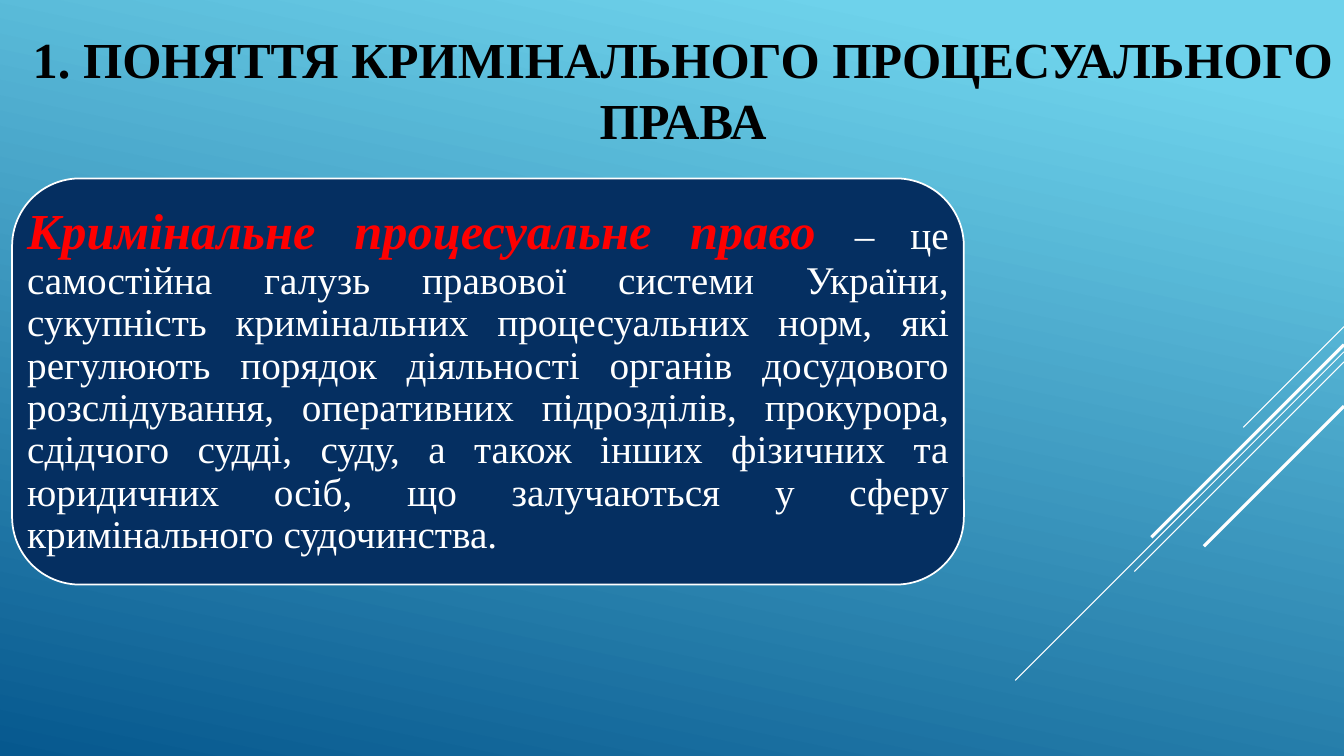
from pptx import Presentation
from pptx.dml.color import RGBColor
from pptx.enum.shapes import MSO_CONNECTOR, MSO_SHAPE
from pptx.enum.text import MSO_ANCHOR, MSO_AUTO_SIZE, PP_ALIGN
from pptx.oxml.ns import qn
from pptx.util import Inches, Pt
from lxml import etree

STRAIGHT = MSO_CONNECTOR.STRAIGHT
ROUNDED = MSO_SHAPE.ROUNDED_RECTANGLE
MIDDLE = MSO_ANCHOR.MIDDLE
NO_FIT = MSO_AUTO_SIZE.NONE
CENTER, JUSTIFY = PP_ALIGN.CENTER, PP_ALIGN.JUSTIFY

FONT = "Times New Roman"
COLORS = {
    "sky": "6ED2EB",
    "deep": "06588E",
    "navy": "052F61",
    "white": "FFFFFF",
    "red": "FF0000",
    "black": "000000",
}
WIDTH, HEIGHT = 13.33, 7.5

TITLE = "1. ПОНЯТТЯ КРИМІНАЛЬНОГО ПРОЦЕСУАЛЬНОГО ПРАВА"
TERM = "Кримінальне процесуальне право "
DEFINITION = (
    "– це самостійна галузь правової системи України, сукупність "
    "кримінальних процесуальних норм, які регулюють порядок діяльності "
    "органів досудового розслідування, оперативних підрозділів, прокурора, "
    "сдідчого судді, суду, а також інших фізичних та юридичних осіб, що "
    "залучаються у сферу кримінального судочинства."
)

# Diagonal strokes: height at the right edge, horizontal run, line width
STROKES = [
    (3.24, 1.0, 0.75),
    (3.49, 3.26, 0.75),
    (3.59, 2.08, 0.75),
    (3.42, 1.91, 2.25),
    (4.03, 1.39, 2.25),
]


def color(name):
    return RGBColor.from_string(COLORS[name])


def add_span(para, text, size, tint, bold=False, italic=False):
    span = para.add_run()
    span.text = text
    span.font.name = FONT
    span.font.size = Pt(size)
    span.font.bold = bold
    span.font.italic = italic
    span.font.color.rgb = color(tint)


def paint_background(page):
    fill = page.background.fill
    fill.gradient()
    fill.gradient_angle = 360 - 102
    for stop, position, name in zip(fill.gradient_stops, (0.1, 1), ("sky", "deep")):
        stop.position = position
        stop.color.rgb = color(name)


def add_strokes(page, right):
    # Every stroke falls at 45 degrees from the right edge
    for top, run, width in STROKES:
        stroke = page.shapes.add_connector(
            STRAIGHT, Inches(right), Inches(top), Inches(right - run), Inches(top + run)
        )
        stroke.line.color.rgb = color("white")
        stroke.line.width = Pt(width)
        etree.SubElement(stroke._element.spPr, qn("a:effectLst"))


def add_definition(page, left, top, width, height):
    place = [Inches(length) for length in (left, top, width, height)]

    # Panel
    panel = page.shapes.add_shape(ROUNDED, *place)
    panel.shadow.inherit = False
    panel.fill.solid()
    panel.fill.fore_color.rgb = color("navy")
    panel.line.color.rgb = color("white")
    panel.line.width = Pt(1.25)

    # Text over the full panel width
    frame = page.shapes.add_textbox(*place).text_frame
    frame.word_wrap = True
    frame.vertical_anchor = MIDDLE
    frame.margin_left = frame.margin_right = Inches(0.15)
    frame.margin_top = frame.margin_bottom = Inches(0.15)
    para = frame.paragraphs[0]
    para.alignment = JUSTIFY
    para.line_spacing = 0.9
    add_span(para, TERM, 36, "red", bold=True, italic=True)
    add_span(para, DEFINITION, 28, "white")


def set_title(page, left, top, width, height):
    title = page.shapes.title
    title.left, title.top = Inches(left), Inches(top)
    title.width, title.height = Inches(width), Inches(height)
    frame = title.text_frame
    frame.word_wrap = True
    frame.auto_size = NO_FIT
    frame.vertical_anchor = MIDDLE
    para = frame.paragraphs[0]
    para.alignment = CENTER
    add_span(para, TITLE, 36, "black", bold=True)


def main():
    deck = Presentation()
    deck.slide_width, deck.slide_height = Inches(WIDTH), Inches(HEIGHT)
    page = deck.slides.add_slide(deck.slide_layouts[5])  # title only
    paint_background(page)
    add_strokes(page, WIDTH)
    add_definition(page, 0.12, 1.77, 9.44, 4.03)
    set_title(page, 0.21, 0.18, 13.13, 1.4)
    deck.save("out.pptx")


if __name__ == "__main__":
    main()
